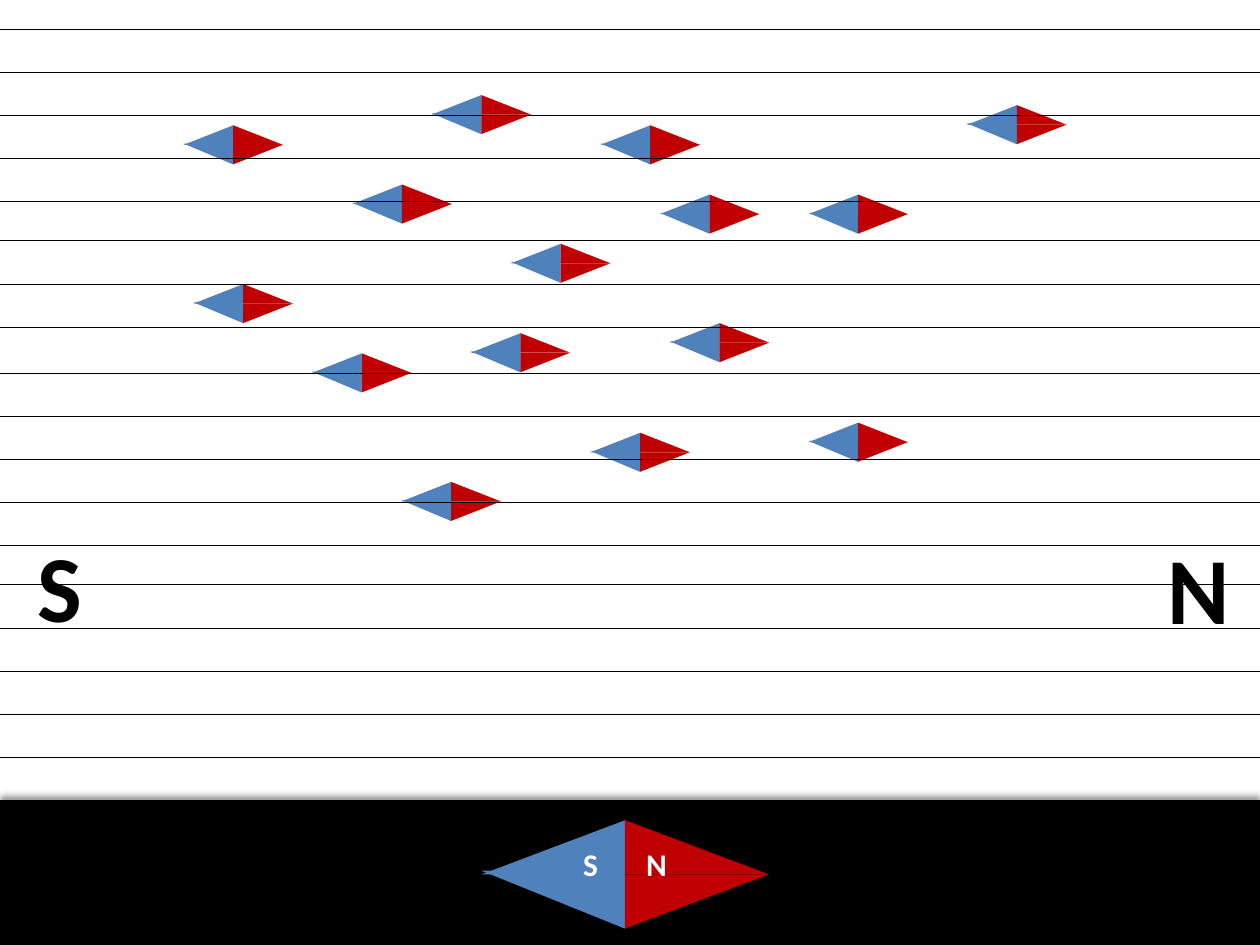
from dataclasses import dataclass

from lxml.etree import SubElement
from pptx import Presentation
from pptx.dml.color import RGBColor
from pptx.enum.shapes import MSO_CONNECTOR, MSO_SHAPE
from pptx.enum.text import MSO_AUTO_SIZE
from pptx.oxml.ns import qn
from pptx.util import Inches, Pt


@dataclass(frozen=True)
class Theme:
    south: RGBColor = RGBColor(0x4F, 0x81, 0xBD)
    north: RGBColor = RGBColor(0xC0, 0x00, 0x00)
    black: RGBColor = RGBColor(0, 0, 0)
    white: RGBColor = RGBColor(255, 255, 255)
    font: str = "Calibri"
    needle_size: int = 18
    pole_size: int = 54
    line_width: float = 0.25


@dataclass(frozen=True)
class Needle:
    x: float
    y: float
    half_width: float = 0.395
    half_height: float = 0.155


@dataclass(frozen=True)
class FieldBand:
    left: float
    top: float
    count: int


@dataclass(frozen=True)
class Label:
    text: str
    left: float
    top: float
    width: float
    height: float
    size: int
    color: RGBColor


THEME = Theme()
LINE_LENGTH = 10.43
LINE_GAP = 1.37 / 4
OVERLAP = 0.07

SMALL_NEEDLES = [
    Needle(x, y)
    for x, y in (
        (3.19, 1.62), (4.13, 2.8), (5.16, 1.15), (4.45, 2.09), (6.81, 3.51),
        (5.08, 3.59), (5.71, 2.72), (6.81, 1.7), (8.07, 0.99), (5.63, 1.7),
        (3.58, 3.98), (3.82, 0.91), (2.87, 2.96), (1.85, 1.15), (1.93, 2.41),
    )
]
LARGE_NEEDLE = Needle(4.96, 6.94, 1.14, 0.43)
FIELD_BANDS = [
    FieldBand(-0.04, 4.64, 5),
    FieldBand(-0.04, 2.96, 5),
    FieldBand(-0.12, 1.91, 3),
    FieldBand(-0.12, 0.23, 5),
]
NEEDLE_LABELS = [
    Label("S", 4.53, 6.66, 0.32, 0.4, THEME.needle_size, THEME.white),
    Label("N", 5.03, 6.66, 0.37, 0.4, THEME.needle_size, THEME.white),
]
POLE_LABELS = [
    Label("S", 0.2, 4.14, 0.56, 1.01, THEME.pole_size, THEME.black),
    Label("N", 9.17, 4.16, 0.7, 1.01, THEME.pole_size, THEME.black),
]


def apply_format(target, values: dict) -> None:
    for name, value in values.items():
        setattr(target, name, value)


def fill_plain(shape, color: RGBColor) -> None:
    shape.shadow.inherit = False
    shape.fill.solid()
    shape.fill.fore_color.rgb = color
    shape.line.fill.background()


def draw_needle(slide, needle: Needle) -> None:
    group = slide.shapes.add_group_shape()
    for side, color in ((-1, THEME.south), (1, THEME.north)):
        for level in (-1, 1):
            overlap = OVERLAP if (side, level) == (-1, 1) else 0
            width = needle.half_height * (1 + overlap)
            height = needle.half_width
            center_x = needle.x + side * needle.half_width / 2
            center_y = needle.y + level * needle.half_height * (1 - overlap) / 2
            triangle = group.shapes.add_shape(
                MSO_SHAPE.RIGHT_TRIANGLE,
                Inches(center_x - width / 2), Inches(center_y - height / 2),
                Inches(width), Inches(height),
            )
            triangle.rotation = 270
            fill_plain(triangle, color)
            transform = triangle._element.spPr.xfrm
            if level > 0:
                transform.set("flipH", "1")
            if side > 0:
                transform.set("flipV", "1")


def draw_footer(slide) -> None:
    footer = slide.shapes.add_shape(
        MSO_SHAPE.RECTANGLE, Inches(0), Inches(6.35), Inches(10), Inches(1.15)
    )
    fill_plain(footer, THEME.black)
    effects = footer._element.spPr.find(qn("a:effectLst"))
    shadow = SubElement(
        effects, qn("a:outerShdw"),
        blurRad=str(Pt(4)), dist=str(Pt(3)), dir="16200000", rotWithShape="0",
    )
    color = SubElement(shadow, qn("a:srgbClr"), val=str(THEME.black))
    SubElement(color, qn("a:alpha"), val="40000")


def draw_label(slide, label: Label) -> None:
    box = slide.shapes.add_textbox(
        Inches(label.left), Inches(label.top), Inches(label.width), Inches(label.height)
    )
    apply_format(box.text_frame, {"word_wrap": False, "auto_size": MSO_AUTO_SIZE.SHAPE_TO_FIT_TEXT})
    run = box.text_frame.paragraphs[0].add_run()
    run.text = label.text
    apply_format(run.font, {"name": THEME.font, "size": Pt(label.size), "bold": True})
    run.font.color.rgb = label.color


def draw_band(slide, band: FieldBand) -> None:
    for row in range(band.count):
        y = Inches(band.top + row * LINE_GAP)
        line = slide.shapes.add_connector(
            MSO_CONNECTOR.STRAIGHT, Inches(band.left), y, Inches(band.left + LINE_LENGTH), y
        )
        line.line.width = Pt(THEME.line_width)
        line.line.color.rgb = THEME.black
        SubElement(line._element.spPr, qn("a:effectLst"))


def main() -> None:
    presentation = Presentation()
    apply_format(presentation, {"slide_width": Inches(10), "slide_height": Inches(7.5)})
    slide = presentation.slides.add_slide(presentation.slide_layouts[6])
    for needle in SMALL_NEEDLES:
        draw_needle(slide, needle)
    draw_footer(slide)
    draw_needle(slide, LARGE_NEEDLE)
    for label in NEEDLE_LABELS:
        draw_label(slide, label)
    for band in FIELD_BANDS:
        draw_band(slide, band)
    for label in POLE_LABELS:
        draw_label(slide, label)
    presentation.save("out.pptx")


if __name__ == "__main__":
    main()
